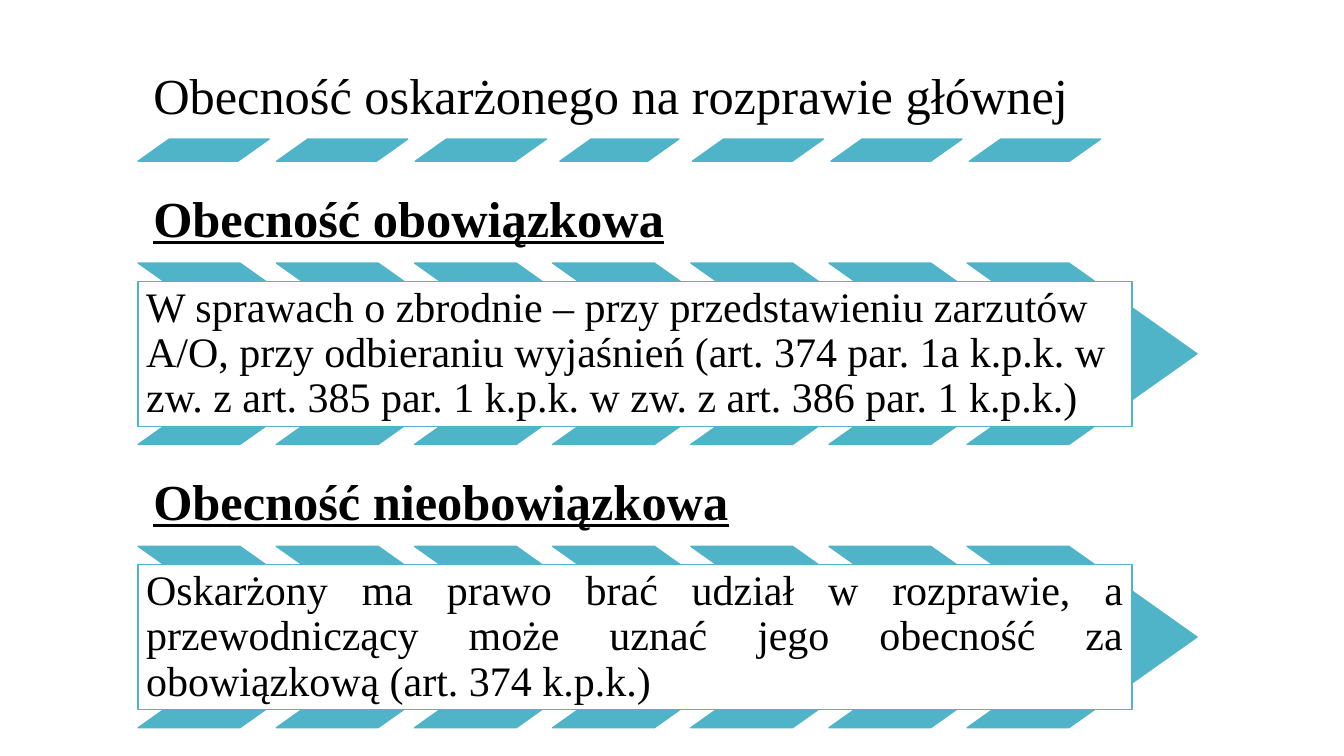
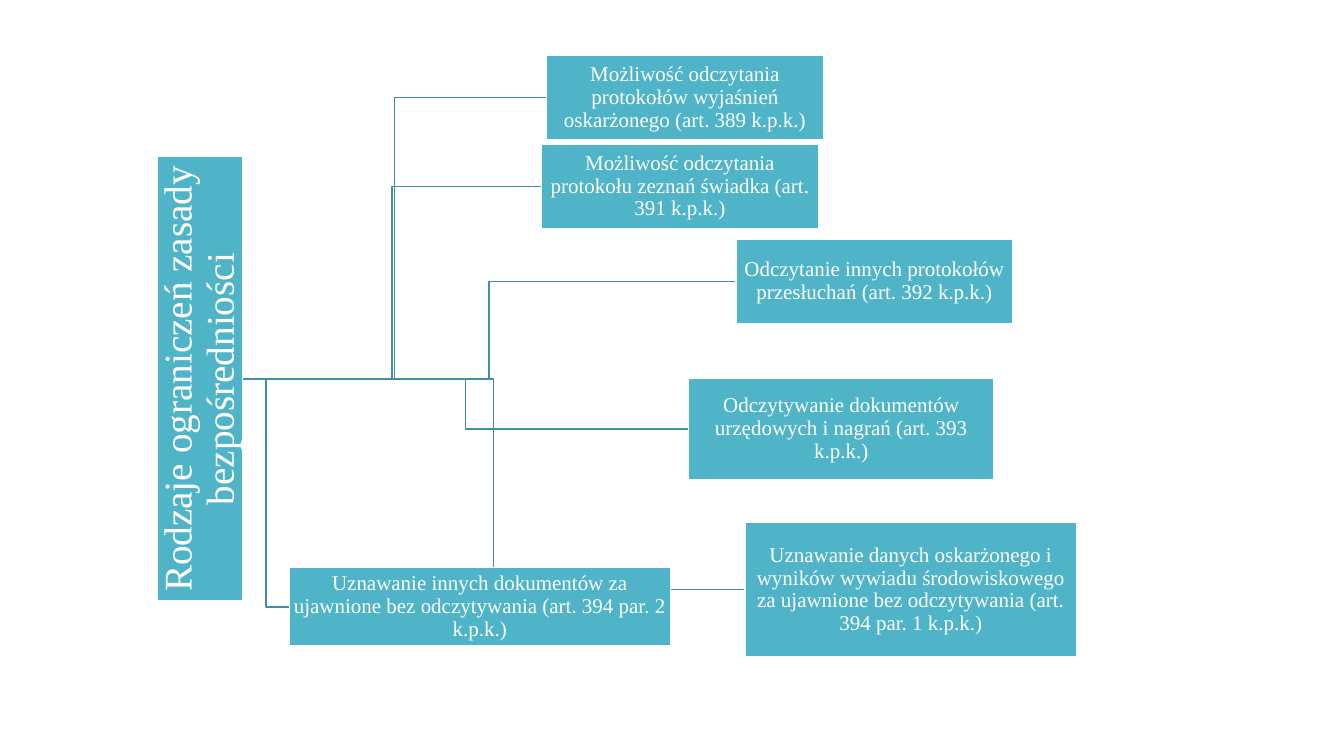
from dataclasses import dataclass

from lxml import etree
from pptx import Presentation
from pptx.dml.color import RGBColor
from pptx.enum.shapes import MSO_CONNECTOR as Link, MSO_SHAPE as Preset
from pptx.enum.text import MSO_ANCHOR as Anchor, PP_ALIGN as Align
from pptx.oxml.ns import qn
from pptx.shapes.autoshape import Shape
from pptx.slide import Slide
from pptx.util import Inches, Pt

FONT = "Times New Roman"
TEAL, DARK_TEAL, WHITE, BLACK = "50B4C8", "4090A0", "FFFFFF", "000000"
SLIDE_WIDTH, SLIDE_HEIGHT = Inches(13.333), Inches(7.5)

# Lengths are percentages of the slide's width and height
LEFT = COLUMN = 10.28
COLUMNS = 7
HEADING_WIDTH, HEADING_HEIGHT = 73.05, 11.87
CARD_WIDTH, CARD_HEIGHT = 73.95, 19.2
CHEVRON_WIDTH, CHEVRON_HEIGHT = 17.1, 24
STRIPE_WIDTH, STRIPE_HEIGHT, STRIPE_STEP = 9.75, 2.93, 10.31
NARROW_STRIPE, NARROW_WIDTH = 3, 8.85


@dataclass(frozen=True)
class Area:
    left: float
    top: float
    width: float
    height: float

    def lengths(self) -> tuple[int, int, int, int]:
        return (
            int(SLIDE_WIDTH * self.left / 100),
            int(SLIDE_HEIGHT * self.top / 100),
            int(SLIDE_WIDTH * self.width / 100),
            int(SLIDE_HEIGHT * self.height / 100),
        )


@dataclass(frozen=True)
class TextStyle:
    size: int
    color: str = BLACK
    emphasis: bool = False
    align: Align = Align.LEFT
    anchor: Anchor = Anchor.MIDDLE
    inset: float = 0.08


@dataclass(frozen=True)
class Section:
    top: float
    heading: str
    body: str
    align: Align


@dataclass(frozen=True)
class Branch:
    area: Area
    text: str


TITLE = TextStyle(36, anchor=Anchor.BOTTOM, inset=0.15)
HEADING = TextStyle(36, emphasis=True, anchor=Anchor.BOTTOM, inset=0.15)
ROOT = TextStyle(28, WHITE, align=Align.CENTER, inset=0.02)
BRANCH = TextStyle(15, WHITE, align=Align.CENTER, inset=0.01)

SECTIONS = [
    Section(
        22.93,
        "Obecność obowiązkowa",
        "W sprawach o zbrodnie – przy przedstawieniu zarzutów A/O, przy odbieraniu "
        "wyjaśnień (art. 374 par. 1a k.p.k. w zw. z art. 385 par. 1 k.p.k. w zw. z "
        "art. 386 par. 1 k.p.k.)",
        Align.LEFT,
    ),
    Section(
        60.4,
        "Obecność nieobowiązkowa",
        "Oskarżony ma prawo brać udział w rozprawie, a przewodniczący może uznać "
        "jego obecność za obowiązkową (art. 374 k.p.k.)",
        Align.JUSTIFY,
    ),
]

BRANCHES = [
    Branch(Area(40.65, 7.33, 20.63, 11.2),
           "Możliwość odczytania protokołów wyjaśnień oskarżonego (art. 389 k.p.k.)"),
    Branch(Area(21.53, 75.07, 28.35, 10.4),
           "Uznawanie innych dokumentów za ujawnione bez odczytywania "
           "(art. 394 par. 2 k.p.k.)"),
    Branch(Area(40.28, 19.07, 20.63, 11.2),
           "Możliwość odczytania protokołu zeznań świadka (art. 391 k.p.k.)"),
    Branch(Area(54.75, 31.6, 20.63, 11.2),
           "Odczytanie innych protokołów przesłuchań (art. 392 k.p.k.)"),
    Branch(Area(51.23, 50, 22.73, 13.47),
           "Odczytywanie dokumentów urzędowych i nagrań (art. 393 k.p.k.)"),
    Branch(Area(55.43, 69.07, 24.68, 17.87),
           "Uznawanie danych oskarżonego i wyników wywiadu środowiskowego za "
           "ujawnione bez odczytywania (art. 394 par. 1 k.p.k.)"),
]


def color(value: str) -> RGBColor:
    return RGBColor.from_string(value)


def write(box: Shape, text: str, style: TextStyle) -> None:
    frame = box.text_frame
    frame.text = text
    frame.word_wrap = True
    frame.vertical_anchor = style.anchor
    frame.margin_left = frame.margin_right = Inches(style.inset)
    frame.margin_top = frame.margin_bottom = Inches(style.inset)
    para = frame.paragraphs[0]
    para.alignment = style.align
    para.line_spacing = 0.9
    font = para.runs[0].font
    font.name, font.size = FONT, Pt(style.size)
    font.color.rgb = color(style.color)
    if style.emphasis:
        font.bold = font.underline = True


def add_text(page: Slide, area: Area, text: str, style: TextStyle) -> None:
    write(page.shapes.add_textbox(*area.lengths()), text, style)


def add_preset(page: Slide, preset: Preset, area: Area, fill: str = TEAL,
               line: str = TEAL, adjust: float | None = None) -> Shape:
    shape = page.shapes.add_shape(preset, *area.lengths())
    shape.shadow.inherit = False
    shape.fill.solid()
    shape.fill.fore_color.rgb = color(fill)
    shape.line.color.rgb = color(line)
    shape.line.width = Pt(1)
    if adjust is not None:
        shape.adjustments[0] = adjust
    return shape


def add_link(page: Slide, start: Shape, end: Shape) -> None:
    """Join the right side of one box to the left side of another, behind both."""
    link = page.shapes.add_connector(Link.ELBOW, 0, 0, 0, 0)
    link.begin_connect(start, 3)
    link.end_connect(end, 1)
    link.line.color.rgb = color(DARK_TEAL)
    link.line.width = Pt(1)
    element = link._element
    etree.SubElement(element.spPr, qn("a:effectLst"))
    element.getparent().insert(2, element)


def add_section(page: Slide, section: Section) -> None:
    add_text(page, Area(LEFT, section.top, HEADING_WIDTH, HEADING_HEIGHT),
             section.heading, HEADING)
    top = section.top + HEADING_HEIGHT
    for column in range(COLUMNS):
        area = Area(LEFT + column * COLUMN, top, CHEVRON_WIDTH, CHEVRON_HEIGHT)
        add_preset(page, Preset.CHEVRON, area, adjust=0.706)
    card_top = top + (CHEVRON_HEIGHT - CARD_HEIGHT) / 2
    card = add_preset(page, Preset.RECTANGLE,
                      Area(LEFT, card_top, CARD_WIDTH, CARD_HEIGHT), WHITE)
    write(card, section.body, TextStyle(30, align=section.align))


def build_presence(page: Slide) -> None:
    # Title over a row of stripes
    add_text(page, Area(LEFT, 6.67, HEADING_WIDTH, HEADING_HEIGHT),
             "Obecność oskarżonego na rozprawie głównej", TITLE)
    for column in range(COLUMNS):
        width = NARROW_WIDTH if column == NARROW_STRIPE else STRIPE_WIDTH
        left = LEFT + column * STRIPE_STEP + (STRIPE_WIDTH - width) / 2
        add_preset(page, Preset.PARALLELOGRAM,
                   Area(left, 18.4, width, STRIPE_HEIGHT), adjust=1.408)
    # Cards over chevrons
    for section in SECTIONS:
        add_section(page, section)


def build_limits(page: Slide) -> None:
    # Upright root
    root = add_preset(page, Preset.RECTANGLE, Area(11.74, 20.73, 6.3, 58.8), line=WHITE)
    write(root, "Rodzaje ograniczeń zasady bezpośredniości", ROOT)
    root.text_frame._txBody.bodyPr.set("vert", "vert270")
    # Branches
    for branch in BRANCHES:
        box = add_preset(page, Preset.RECTANGLE, branch.area, line=WHITE)
        write(box, branch.text, BRANCH)
        add_link(page, root, box)


def main() -> None:
    deck = Presentation()
    deck.slide_width, deck.slide_height = SLIDE_WIDTH, SLIDE_HEIGHT
    for build in (build_presence, build_limits):
        build(deck.slides.add_slide(deck.slide_layouts[6]))
    deck.save("out.pptx")


if __name__ == "__main__":
    main()
